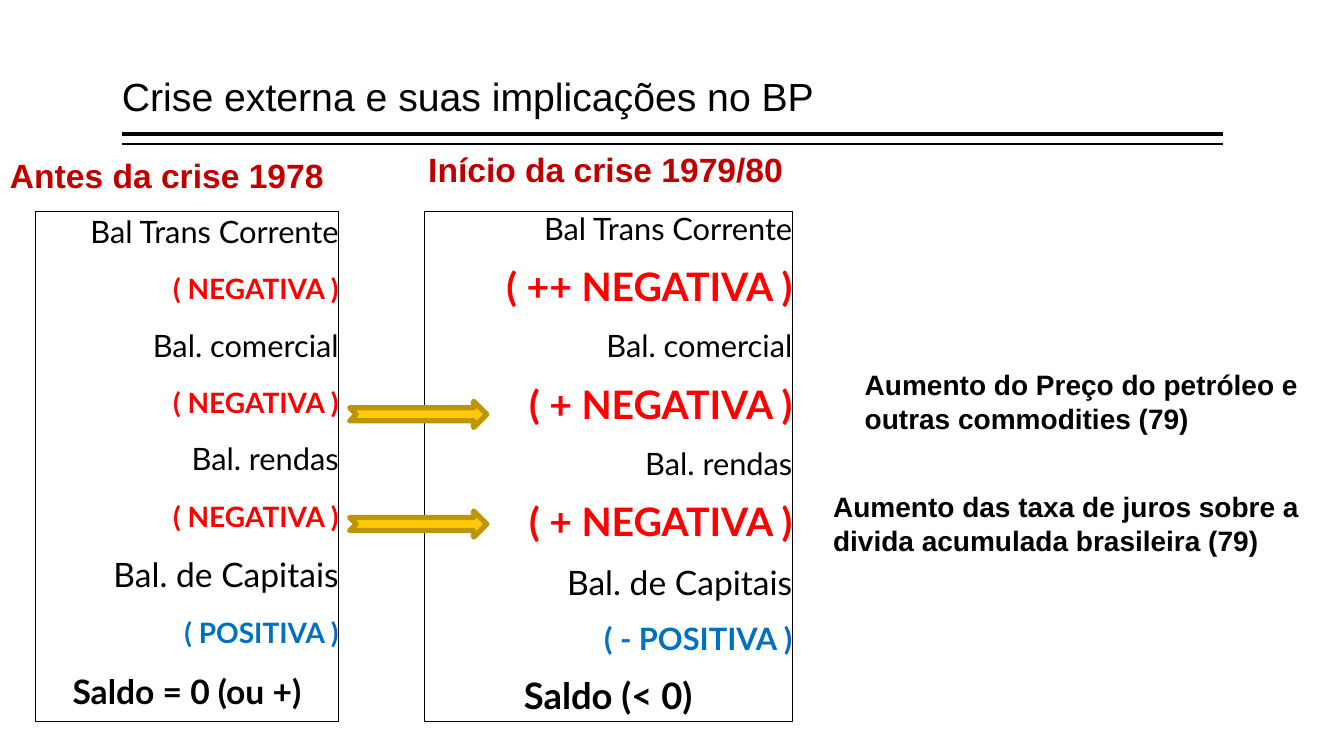
from pptx import Presentation
from pptx import util as u
from pptx.dml.color import RGBColor
from pptx.enum import shapes, text
from pptx.oxml import parse_xml

Pt = u.Pt
COLORS = {"ink": "000000", "negative": "FF0000", "positive": "0070C0",
          "heading": "C00000", "arrow": "FFCA08", "arrow_edge": "BD9506"}
DRAWING_NS = "http://schemas.openxmlformats.org/drawingml/2006/main"
BALANCES = ["Bal Trans Corrente", "Bal. comercial", "Bal. rendas", "Bal. de Capitais"]
BALANCE_SIZES = [22, 22, 22, 24]


def color(name):
    """Return the named colour."""
    return RGBColor.from_string(COLORS[name])


def style(paragraph, size, ink="ink", bold=False, font="Arial"):
    """Format every run of a paragraph."""
    for run in paragraph.runs:
        run.font.name = font
        run.font.size = Pt(size)
        run.font.bold = bold
        run.font.color.rgb = color(ink)


def place(item, left, top, width, height):
    """Position an element, in points."""
    item.left, item.top, item.width, item.height = map(Pt, (left, top, width, height))


def set_title(slide, wording):
    """Fill and position the slide title."""
    title = slide.shapes.title
    place(title, 87.1, 2.9, 785.5, 86.4)
    frame = title.text_frame
    frame.text = wording
    frame.word_wrap = True
    frame.auto_size = text.MSO_AUTO_SIZE.NONE
    frame.vertical_anchor = text.MSO_ANCHOR.BOTTOM
    frame.margin_left = frame.margin_right = 0
    frame.margin_top = frame.margin_bottom = Pt(3.6)
    heading = frame.paragraphs[0]
    heading.alignment = text.PP_ALIGN.LEFT
    heading.line_spacing = 0.9
    style(heading, 28)


def add_rule(slide, top, weight):
    """Draw a horizontal line under the title."""
    rule = slide.shapes.add_connector(
        shapes.MSO_CONNECTOR.STRAIGHT, Pt(87.1), Pt(top), Pt(873.4), Pt(top))
    rule.line.color.rgb = color("ink")
    rule.line.width = Pt(weight)
    rule._element.spPr.append(parse_xml(f'<a:effectLst xmlns:a="{DRAWING_NS}"/>'))


def add_label(slide, wording, left, top, width, height, size, ink):
    """Add a bold text label."""
    label = slide.shapes.add_textbox(Pt(left), Pt(top), Pt(width), Pt(height))
    label.text_frame.word_wrap = True
    label.text_frame.text = wording
    style(label.text_frame.paragraphs[0], size, ink, True)


def add_balance_panel(slide, left, width, spacing, signs, result):
    """Add a framed list of balances, their signs and the final result."""
    panel = slide.shapes.add_shape(
        shapes.MSO_SHAPE.RECTANGLE, Pt(left), Pt(151.2), Pt(width), Pt(364.3))
    panel.shadow.inherit = False
    panel.fill.background()
    panel.line.color.rgb = color("ink")
    panel.line.width = Pt(0.5)
    frame = panel.text_frame
    frame.word_wrap = True
    frame.vertical_anchor = text.MSO_ANCHOR.TOP
    frame.margin_left = frame.margin_right = 0
    frame.margin_top = frame.margin_bottom = Pt(3.6)

    entries = []
    for balance, balance_size, (sign, sign_size, ink) in zip(BALANCES, BALANCE_SIZES, signs):
        entries.append((balance, balance_size, "ink", False))
        entries.append((f"( {sign} )", sign_size, ink, True))
    entries.append((*result, "ink", True))

    frame.text = "\n".join(entry[0] for entry in entries)
    for index, (paragraph, entry) in enumerate(zip(frame.paragraphs, entries)):
        paragraph.alignment = text.PP_ALIGN.RIGHT
        paragraph.line_spacing = spacing
        paragraph.space_before = Pt(18 if index else 0)
        style(paragraph, *entry[1:], font="Lato")
    frame.paragraphs[-1].alignment = text.PP_ALIGN.CENTER


def add_arrow(slide, top):
    """Add a notched arrow between the two panels."""
    arrow = slide.shapes.add_shape(
        shapes.MSO_SHAPE.NOTCHED_RIGHT_ARROW, Pt(249.8), Pt(top), Pt(97.9), Pt(18.7))
    arrow.shadow.inherit = False
    arrow.fill.solid()
    arrow.fill.fore_color.rgb = color("arrow")
    arrow.line.color.rgb = color("arrow_edge")
    arrow.line.width = Pt(3.78)


def main():
    """Build the slide and save it."""
    deck = Presentation()
    deck.slide_width, deck.slide_height = Pt(960), Pt(540)
    slide = deck.slides.add_slide(deck.slide_layouts[5])

    set_title(slide, "Crise externa e suas implicações no BP")
    add_rule(slide, 95.8, 3)
    add_rule(slide, 103, 1)

    before = [("NEGATIVA", 20, "negative")] * 3 + [("POSITIVA", 20, "positive")]
    onset = [("++ NEGATIVA", 28, "negative"), ("+ NEGATIVA", 28, "negative"),
             ("+ NEGATIVA", 28, "negative"), ("- POSITIVA", 22, "positive")]
    add_balance_panel(slide, 25.2, 216.7, 0.9, before, ("Saldo = 0 (ou +)", 24))
    add_balance_panel(slide, 303.1, 262.8, 0.8, onset, ("Saldo (< 0)", 26))

    add_label(slide, "Antes da crise 1978", 0, 107.3, 249.8, 36.7, 24, "heading")
    add_label(slide, "Início da crise 1979/80", 298.8, 103, 271.4, 36.7, 24, "heading")
    add_label(slide, "Aumento do Preço do petróleo e outras commodities (79)",
              610.6, 259.2, 333.4, 55.4, 20, "ink")
    add_label(slide, "Aumento das taxa de juros sobre a divida acumulada brasileira (79)",
              588, 346.3, 355.7, 55.4, 20, "ink")
    for top in (286.6, 365):
        add_arrow(slide, top)

    deck.save("out.pptx")


if __name__ == "__main__":
    main()
